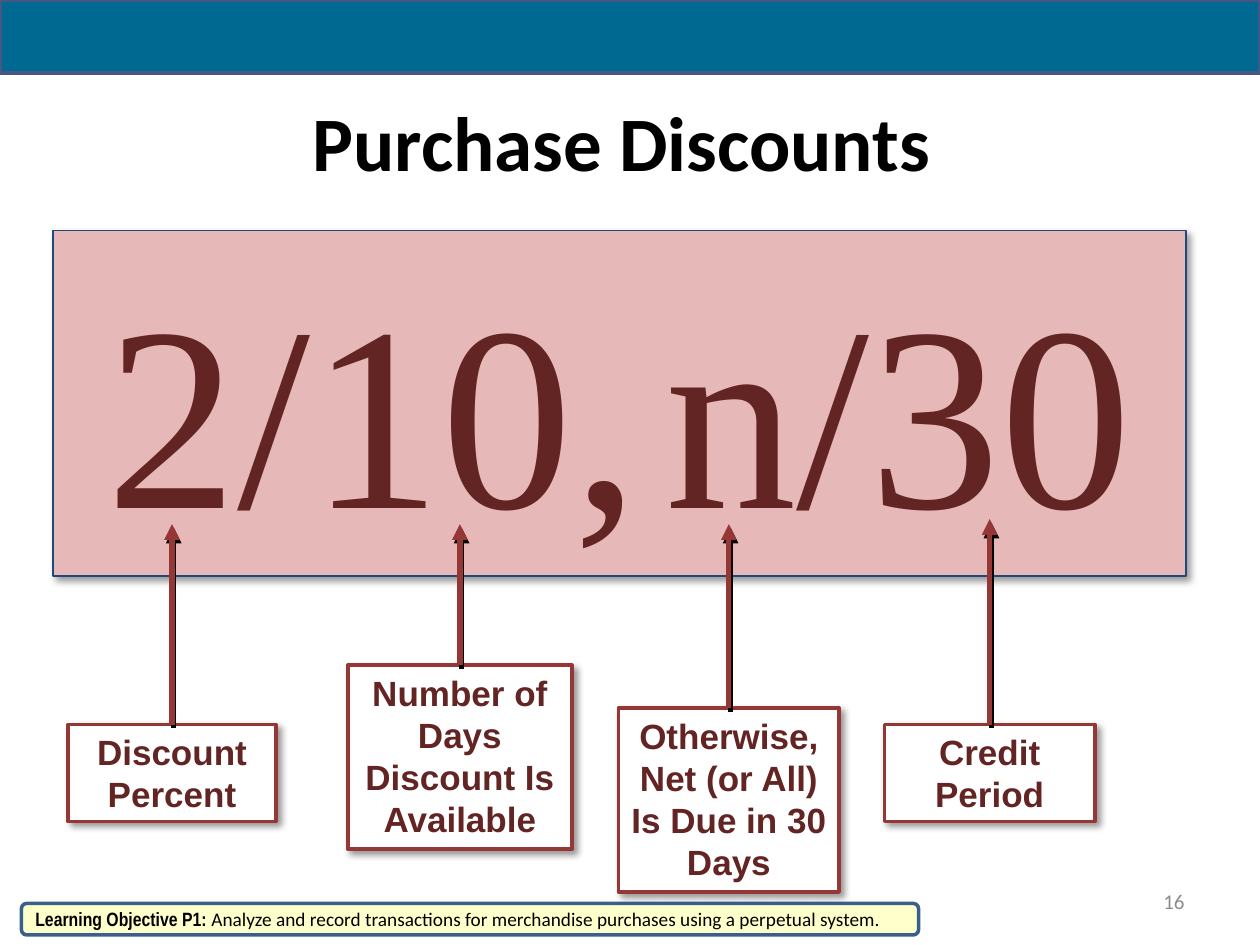
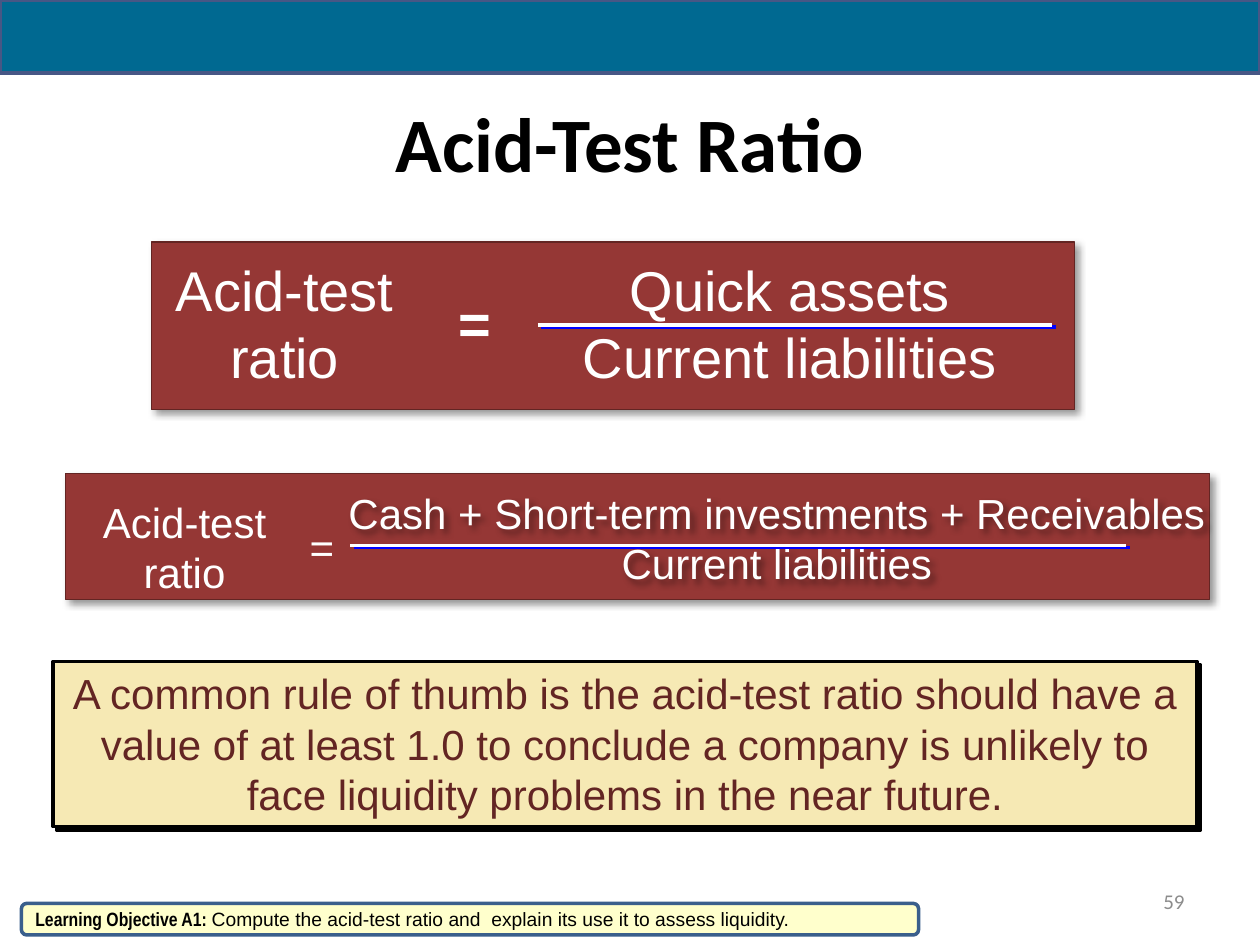
from dataclasses import dataclass

from lxml import etree
from pptx import Presentation
from pptx.dml.color import RGBColor
from pptx.enum.shapes import MSO_CONNECTOR, MSO_SHAPE
from pptx.enum.text import MSO_ANCHOR, PP_ALIGN
from pptx.oxml.ns import qn
from pptx.util import Inches, Pt

RECT = MSO_SHAPE.RECTANGLE
ROUND = MSO_SHAPE.ROUNDED_RECTANGLE
LINE = MSO_CONNECTOR.STRAIGHT
LEFT, CENTER, RIGHT = PP_ALIGN.LEFT, PP_ALIGN.CENTER, PP_ALIGN.RIGHT
TOP, MIDDLE = MSO_ANCHOR.TOP, MSO_ANCHOR.MIDDLE


@dataclass(frozen=True)
class Theme:
    black: str = "000000"
    white: str = "FFFFFF"
    blue: str = "0000FF"
    gray: str = "8C8C8C"
    band: str = "006991"
    edge: str = "475785"
    note: str = "FFFFCC"
    rim: str = "3A5F8C"
    pink: str = "E6B9B8"
    navy: str = "1F497D"
    red: str = "953735"
    wine: str = "632523"
    cream: str = "F6E9B4"
    sans: str = "Arial"
    thin: str = "Arial Narrow"
    head: str = "Calibri"
    serif: str = "Times New Roman"
    title: int = 44
    giant: int = 150
    gap: int = 60
    large: int = 32
    body: int = 24
    label: int = 20
    page: int = 12
    foot: int = 11


T = Theme()
SOFT = (T.black, 40, 4, 3, 45)
HARD = (T.black, 100, 0, 2.8, 45)
DROP = (T.black, 100, 0, 2.2, 63)
GLINT = (T.blue, 100, 0, 2.2, 27)


def shade(item, cast):
    effect = etree.SubElement(item._element.spPr, qn("a:effectLst"))
    if cast:
        color, alpha, blur, dist, angle = cast
        outer = etree.SubElement(
            effect, qn("a:outerShdw"), blurRad=str(Pt(blur)), dist=str(Pt(dist)),
            dir=str(angle * 60000), algn="tl", rotWithShape="0")
        tone = etree.SubElement(outer, qn("a:srgbClr"), val=color)
        etree.SubElement(tone, qn("a:alpha"), val=str(alpha * 1000))


def panel(slide, box, fill, edge, width, cast=None, form=RECT):
    item = slide.shapes.add_shape(form, *map(Inches, box))
    item.fill.solid()
    item.fill.fore_color.rgb = RGBColor.from_string(fill)
    item.line.color.rgb = RGBColor.from_string(edge)
    item.line.width = Pt(width)
    shade(item, cast)
    return item


def style(text, size, font, color, bold=False):
    return text, size, font, color, bold


def write(item, lines, align=CENTER, anchor=TOP, wrap=True):
    frame = item.text_frame
    frame.word_wrap = wrap
    frame.vertical_anchor = anchor
    for index, runs in enumerate(lines):
        para = frame.add_paragraph() if index else frame.paragraphs[0]
        para.alignment = align
        for text, size, font, color, bold in runs:
            for part, words in enumerate(text.split("\n")):
                if part:
                    para.add_line_break()
                run = para.add_run()
                run.text = words
                run.font.size = Pt(size)
                run.font.name = font
                run.font.bold = bold
                run.font.color.rgb = RGBColor.from_string(color)


def label(slide, box, lines, align=CENTER, anchor=TOP, wrap=True):
    item = slide.shapes.add_textbox(*map(Inches, box))
    write(item, lines, align, anchor, wrap)
    return item


def stroke(slide, start, end, color, width, cast, arrow=False):
    item = slide.shapes.add_connector(LINE, *map(Inches, start + end))
    item.line.color.rgb = RGBColor.from_string(color)
    item.line.width = Pt(width)
    if arrow:
        etree.SubElement(item.line._ln, qn("a:tailEnd"), type="triangle")
    shade(item, cast)


def frame(deck, title, box, page, goal, text, font):
    slide = deck.slides.add_slide(deck.slide_layouts[6])
    label(slide, box, [[style(title, T.title, T.head, T.black, True)]], anchor=MIDDLE)
    panel(slide, (0, 0, 10, 0.58), T.band, T.edge, 2.25)
    label(slide, (7.17, 6.95, 2.33, 0.4),
          [[style(page, T.page, T.head, T.gray)]], RIGHT, MIDDLE)
    note = panel(slide, (0.17, 7.17, 7.12, 0.25), T.note, T.rim, 2, form=ROUND)
    write(note, [[style(f"Learning Objective {goal}: ", T.foot, T.thin, T.black, True),
                  style(text, T.foot, font, T.black)]], LEFT, MIDDLE)
    return slide


def terms(slide, box):
    item = panel(slide, box, T.pink, T.navy, 1, SOFT)
    write(item, [[style("2/10,", T.giant, T.serif, T.wine),
                  style(" ", T.gap, T.serif, T.wine),
                  style("n/30", T.giant, T.serif, T.wine)]], anchor=MIDDLE, wrap=False)


def callout(slide, box, text, tip):
    left, top, width, _ = box
    item = panel(slide, box, T.white, T.red, 2, SOFT)
    write(item, [[style(text, T.label, T.sans, T.wine, True)]])
    mid = left + width / 2
    stroke(slide, (mid, top), (mid, tip), T.red, 3, DROP, arrow=True)


def ratio(slide, box, upper, size, name, equal, share, rule, weight, bold=False, cast=None):
    left, top = box[:2]
    panel(slide, box, T.red, T.wine, 0.75, SOFT)

    def place(spot, words, align=CENTER, bold=False):
        x, y, width, height = spot
        lines = [[style(word, size, T.sans, T.white, bold)] for word in words]
        return label(slide, (left + x, top + y, width, height), lines, align, wrap=False)

    place(name, ("Acid-test", "ratio"))
    place(equal, ("=",), LEFT, bold)
    part = place(share, (upper, "Current liabilities"))
    if cast:
        shade(part, cast)
    start, end, drop = rule
    stroke(slide, (left + start, top + drop), (left + end, top + drop),
           T.white, weight, GLINT)


def advice(slide, box, text):
    item = panel(slide, box, T.cream, T.black, 2, HARD)
    write(item, [[style(text, T.body, T.sans, T.wine)]])


def discounts(deck):
    slide = frame(
        deck, "Purchase Discounts", (1.02, 0.58, 7.83, 1.08), "16", "P1",
        "Analyze and record transactions for merchandise purchases using a perpetual system.",
        T.head)
    terms(slide, (0.42, 1.83, 8.99, 2.74))
    for box, text, tip in (
        ((0.54, 5.75, 1.65, 0.77), "Discount Percent", 4.16),
        ((2.76, 5.28, 1.78, 1.46), "Number of Days Discount Is Available", 4.16),
        ((4.91, 5.62, 1.75, 1.46), "Otherwise, Net (or All) Is Due in 30 Days", 4.16),
        ((7.02, 5.75, 1.67, 0.77), "Credit\nPeriod", 4.12),
    ):
        callout(slide, box, text, tip)


def acid(deck):
    slide = frame(
        deck, "Acid-Test Ratio", (0.5, 0.5, 9, 1.25), "59", "A1",
        "Compute the acid-test ratio and  explain its use it to assess liquidity.", T.sans)
    advice(slide, (0.42, 5.25, 9.08, 1.31),
           "A common rule of thumb is the acid-test ratio should have a value of at least 1.0 "
           "to conclude a company is unlikely to face liquidity problems in the near future.")
    ratio(slide, (1.2, 1.92, 7.33, 1.33), "Quick assets", T.large,
          name=(0.09, 0.06, 1.94, 1.18), equal=(2.34, 0.32, 0.46, 0.64),
          share=(2.94, 0.06, 4.26, 1.18), rule=(3.07, 7.15, 0.66), weight=2.25, bold=True)
    ratio(slide, (0.52, 3.76, 9.08, 1), "Cash + Short-term investments + Receivables", T.body,
          name=(0.19, 0.13, 1.51, 0.91), equal=(1.84, 0.33, 0.4, 0.5),
          share=(1.74, 0.06, 7.81, 0.91), rule=(2.26, 8.42, 0.57), weight=1.5, cast=SOFT)


def main():
    deck = Presentation()
    deck.slide_width, deck.slide_height = Inches(10), Inches(7.5)
    discounts(deck)
    acid(deck)
    deck.save("out.pptx")


if __name__ == "__main__":
    main()
